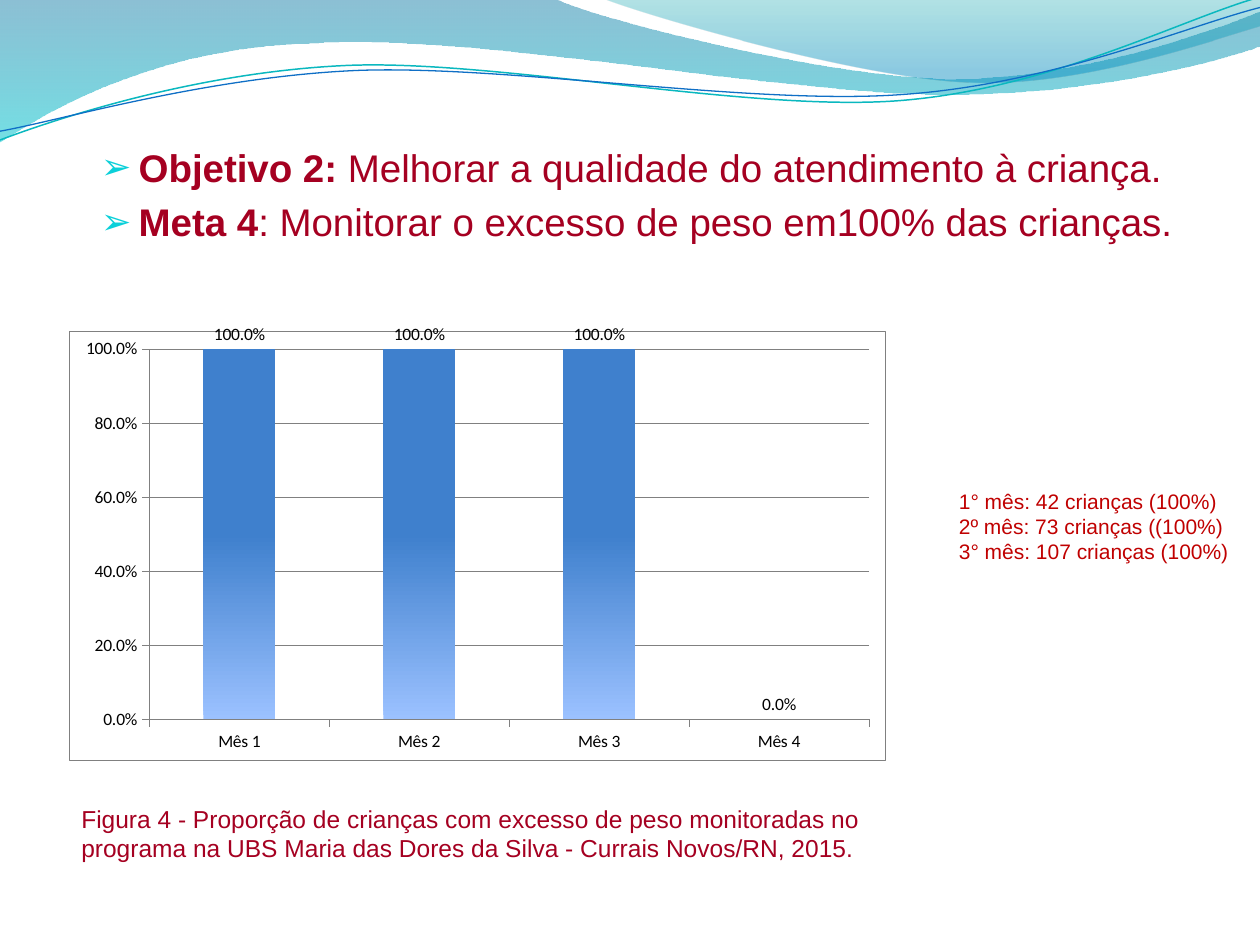
import itertools

import pptx
import pptx.chart.data
import pptx.dml.color
import pptx.enum.chart
import pptx.enum.text
import pptx.oxml
import pptx.oxml.ns
import pptx.util
from pptx.util import Pt

COLORS = {
    "wine": "A50021", "red": "C00000", "bullet": "0BD0D9", "black": "000000",
    "gray": "808080", "white": "FFFFFF", "teal line": "0AB8BF",
    "blue line": "0F6FC6", "deep blue": "0074A1", "cyan": "00C6CF",
    "teal": "00A1A9", "sky": "008BBF", "bar light": "9BC1FF", "bar dark": "3F80CD",
}
NAMESPACE = pptx.oxml.ns.nsdecls("a")

# Waves in points: a start, then corners (2 numbers) or Bézier curves (6 numbers).
LEFT_WAVE = [(0, 0), (317, -0.7), (343, 12, 478, 45, 546, 45),
             (614, 45, 690, 19, 720, 6.5), (720.7, 26),
             (708, 32, 626, 55, 537, 54), (448, 54, 275, 20, 185, 24.5),
             (93, 26, 33, 60, -0.7, 81.4)]
RIGHT_WAVE = [(345, -0.7), (366, 8, 491, 45, 554, 47),
              (616, 50, 692, 23, 720, 15), (720, 0)]
TEAL_CURVE = [(0, 80), (34.5, 67, 114, 41, 199, 37.4),
              (284, 34, 427, 64, 513, 57.6), (600, 51, 675, 11, 719, -1.4)]
BLUE_CURVE = [(0, 75), (34, 69, 118, 44, 204, 40.3),
              (290, 37, 430, 60.5, 516, 54), (602, 48, 678, 15, 720, 4.3)]


def rgb(name):
    return pptx.dml.color.RGBColor.from_string(COLORS[name])


def apply_format(target, values):
    for name, value in values.items():
        setattr(target, name, value)


def set_gradient(properties, stops, angle):
    """Replace the solid fill with stops of (position, colour, opacity), in percent."""
    stop_xml = "".join(
        f'<a:gs pos="{position * 1000}"><a:srgbClr val="{COLORS[color]}">'
        f'<a:alpha val="{opacity * 1000}"/></a:srgbClr></a:gs>'
        for position, color, opacity in stops)
    gradient = pptx.oxml.parse_xml(
        f'<a:gradFill {NAMESPACE} rotWithShape="1"><a:gsLst>{stop_xml}</a:gsLst>'
        f'<a:lin ang="{angle * 60000}" scaled="0"/></a:gradFill>')
    solid = properties.find(pptx.oxml.ns.qn("a:solidFill"))
    properties.replace(solid, gradient)


def add_outline(slide, outline, close):
    """Build a freeform, then join each three lines of a curve into one Bézier."""
    numbers = [Pt(number) for number in itertools.chain(*outline)]
    points = list(zip(numbers[::2], numbers[1::2]))
    builder = slide.shapes.build_freeform(*points[0])
    builder.add_line_segments(points[1:], close=close)
    shape = builder.convert_to_shape()
    shape.shadow.inherit = False

    lines = list(shape._element.iter(pptx.oxml.ns.qn("a:lnTo")))
    for segment in outline[1:]:
        count = len(segment) // 2
        parts, lines = lines[:count], lines[count:]
        if count == 3:
            curve = pptx.oxml.parse_xml(f"<a:cubicBezTo {NAMESPACE}/>")
            parts[0].addprevious(curve)
            for part in parts:
                curve.append(part[0])
                part.getparent().remove(part)
    return shape


def add_wave(slide, outline, stops):
    shape = add_outline(slide, outline, True)
    shape.line.fill.background()
    shape.fill.solid()
    set_gradient(shape._element.spPr, stops, 90)


def add_curve(slide, outline, color, width):
    shape = add_outline(slide, outline, False)
    shape.fill.background()
    shape.line.color.rgb = rgb(color)
    shape.line.width = Pt(width)


def add_text(slide, box, paragraphs, size, color, **paragraph_format):
    """Add a text box; each paragraph is a list of (text, bold) runs."""
    frame = slide.shapes.add_textbox(*map(Pt, box)).text_frame
    frame.word_wrap = True
    for index, runs in enumerate(paragraphs):
        paragraph = frame.add_paragraph() if index else frame.paragraphs[0]
        apply_format(paragraph, paragraph_format)
        for text, bold in runs:
            run = paragraph.add_run()
            run.text = text
            apply_format(run.font, {"name": "Arial", "size": Pt(size), "bold": bold})
            run.font.color.rgb = rgb(color)
    return frame


def set_indent(paragraph, left, first=0):
    properties = paragraph._p.get_or_add_pPr()
    properties.set("marL", str(Pt(left)))
    properties.set("indent", str(Pt(first)))
    return properties


def add_bullet(paragraph):
    properties = set_indent(paragraph, 21.6, -21.6)
    for tag in (f'buClr {NAMESPACE}><a:srgbClr val="{COLORS["bullet"]}"/></a:buClr>',
                f'buSzPct {NAMESPACE} val="95000"/>',
                f'buFont {NAMESPACE} typeface="Arial"/>',
                f'buChar {NAMESPACE} char="➢"/>'):
        properties.append(pptx.oxml.parse_xml("<a:" + tag))


def style_line(line):
    line.color.rgb = rgb("gray")
    line.width = Pt(0.25)


def style_font(font):
    apply_format(font, {"name": "Calibri", "size": Pt(10), "bold": False})
    font.color.rgb = rgb("black")


def frame_chart(chart):
    """Give the chart a white ground, a thin border and a fixed plot area."""
    namespaces = pptx.oxml.ns.nsdecls("c", "a")
    white = f'<a:solidFill><a:srgbClr val="{COLORS["white"]}"/></a:solidFill>'
    border = (f'<a:ln w="{Pt(0.25)}"><a:solidFill><a:srgbClr val="{COLORS["gray"]}"/>'
              '</a:solidFill></a:ln>')
    space = chart._chartSpace
    space.chart.addnext(pptx.oxml.parse_xml(
        f"<c:spPr {namespaces}>{white}{border}</c:spPr>"))
    plot_area = space.chart.plotArea
    plot_area.append(pptx.oxml.parse_xml(f"<c:spPr {namespaces}>{white}</c:spPr>"))
    for layout in plot_area.findall(pptx.oxml.ns.qn("c:layout")):
        plot_area.remove(layout)
    place = "".join(f'<c:{name} val="{value}"/>' for name, value in (
        ("layoutTarget", "inner"), ("xMode", "edge"), ("yMode", "edge"),
        ("x", 9.8 / 100), ("y", 4.2 / 100), ("w", 88.2 / 100), ("h", 86.3 / 100)))
    plot_area.insert(0, pptx.oxml.parse_xml(
        f"<c:layout {namespaces}><c:manualLayout>{place}</c:manualLayout></c:layout>"))


def add_column_chart(slide, box, categories, values):
    data = pptx.chart.data.CategoryChartData(number_format="0.0%")
    data.categories = categories
    data.add_series("Series 1", values)
    kind = pptx.enum.chart.XL_CHART_TYPE.COLUMN_CLUSTERED
    chart = slide.shapes.add_chart(kind, *map(Pt, box), data).chart
    apply_format(chart, {"has_legend": False, "has_title": False})
    style_font(chart.font)
    for axis in (chart.category_axis, chart.value_axis):
        axis.major_tick_mark = pptx.enum.chart.XL_TICK_MARK.OUTSIDE
        style_font(axis.tick_labels.font)
        style_line(axis.format.line)
    apply_format(chart.value_axis, {"maximum_scale": 1, "major_unit": 0.2,
                                    "has_major_gridlines": True})
    style_line(chart.value_axis.major_gridlines.format.line)
    number_format = {"number_format": "0.0%", "number_format_is_linked": False}
    apply_format(chart.value_axis.tick_labels, number_format)

    plot = chart.plots[0]
    apply_format(plot, {"gap_width": 150, "vary_by_categories": False})
    series = plot.series[0]
    series.format.fill.solid()
    set_gradient(series._element.spPr, [(0, "bar light", 100), (50, "bar dark", 100),
                                        (100, "bar dark", 100)], 270)
    labels = series.data_labels
    position = pptx.enum.chart.XL_LABEL_POSITION.OUTSIDE_END
    apply_format(labels, {"show_value": True, "position": position, **number_format})
    style_font(labels.font)
    frame_chart(chart)


def main():
    presentation = pptx.Presentation()
    presentation.slide_width, presentation.slide_height = Pt(720), Pt(540)
    slide = presentation.slides.add_slide(presentation.slide_layouts[6])

    add_wave(slide, LEFT_WAVE, [(0, "deep blue", 45), (100, "cyan", 55)])
    add_wave(slide, RIGHT_WAVE, [(0, "teal", 30), (80, "sky", 45)])
    add_curve(slide, TEAL_CURVE, "teal line", 0.85)
    add_curve(slide, BLUE_CURVE, "blue line", 0.75)

    counts = add_text(slide, (534.4, 275.5, 185.6, 51), [
        [("1° mês: 42 crianças (100%)", False)],
        [("2º mês: 73 crianças ((100%)", False)],
        [("3° mês: 107 crianças (100%) ", False)],
    ], 12, "red", alignment=pptx.enum.text.PP_ALIGN.JUSTIFY)
    for paragraph in counts.paragraphs:
        set_indent(paragraph, 6.5)

    add_column_chart(slide, (39.6, 185.6, 466.5, 249),
                     [f"Mês {month}" for month in range(1, 5)], (1, 1, 1, 0))
    add_text(slide, (39.4, 455.7, 492.5, 41), [[(
        "Figura 4 - Proporção de crianças com excesso de peso monitoradas no programa "
        "na UBS Maria das Dores da Silva - Currais Novos/RN, 2015.", False)]], 14, "wine")
    goals = add_text(slide, (50.6, 78.5, 642, 43), [
        [("Objetivo 2:", True), (" Melhorar a qualidade do atendimento à criança.", False)],
        [("Meta 4", True), (": Monitorar o excesso de peso em100% das crianças.", False)],
    ], 22, "wine", space_before=Pt(4.9))
    for paragraph in goals.paragraphs:
        add_bullet(paragraph)

    presentation.save("out.pptx")


if __name__ == "__main__":
    main()
